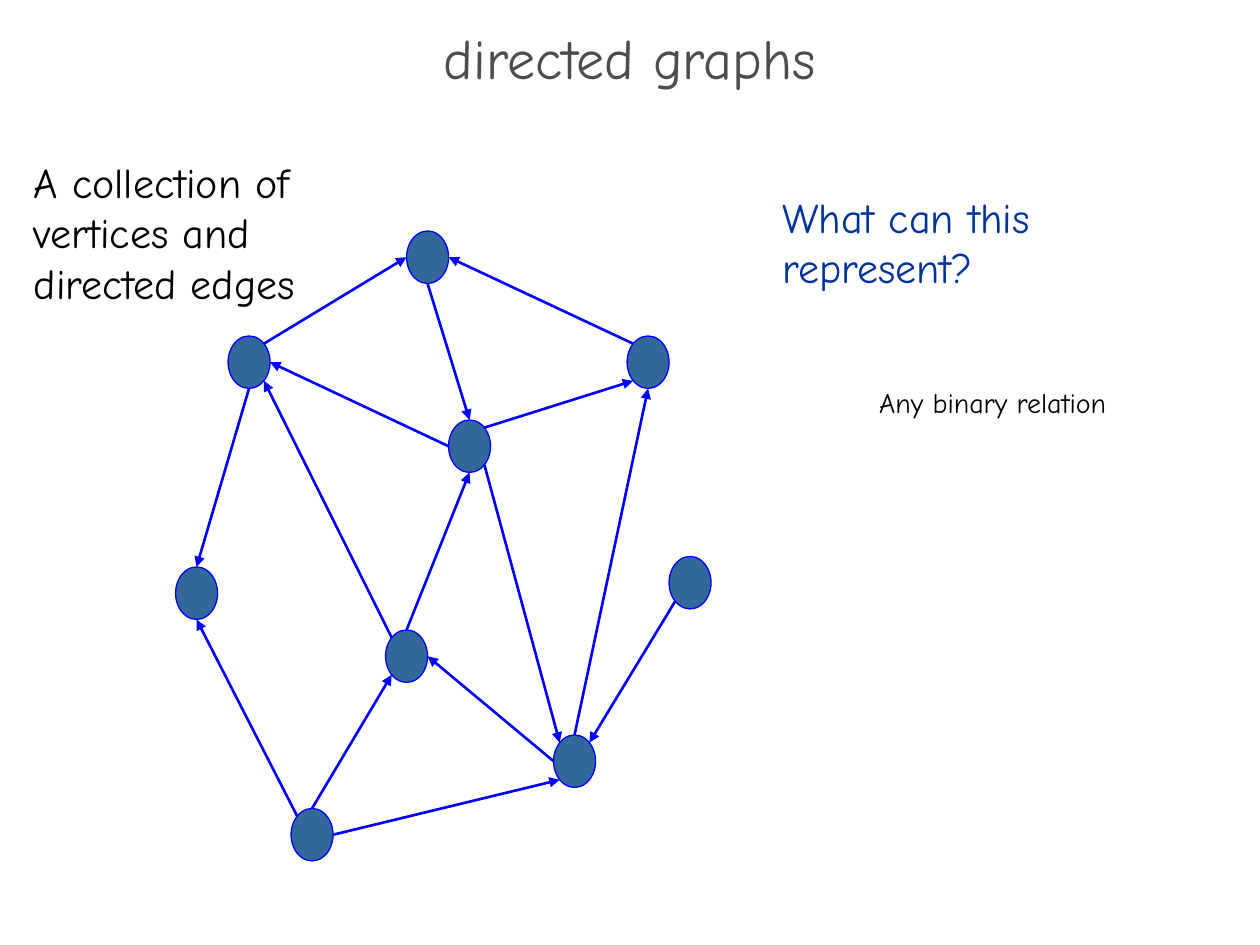
from math import cos, radians, sin

from lxml.etree import SubElement
from pptx import Presentation
from pptx.dml.color import RGBColor
from pptx.enum.shapes import MSO_CONNECTOR, MSO_SHAPE
from pptx.enum.text import MSO_ANCHOR, MSO_AUTO_SIZE, PP_ALIGN
from pptx.oxml.ns import qn
from pptx.util import Inches, Pt

GRAY = RGBColor(0x4D, 0x4D, 0x4D)
BLACK = RGBColor(0x00, 0x00, 0x00)
NAVY = RGBColor(0x00, 0x33, 0x99)
STEEL = RGBColor(0x33, 0x66, 0x99)
BLUE = RGBColor(0x00, 0x00, 0xFF)

COMPASS = {name: radians(45 * step) for step, name in
           enumerate(("E", "SE", "S", "SW", "W", "NW", "N", "NE"))}

VERTICES = {
    "top": (41, 24.5),
    "left": (24, 34.5),
    "lone": (66, 55.5),
    "center": (45, 42.5),
    "inner": (39, 62.5),
    "far left": (19, 56.5),
    "right": (62, 34.5),
    "bottom": (30, 79.5),
    "sink": (55, 72.5),
}

EDGES = (
    ("left", "NE", "top", "W"),
    ("left", "S", "far left", "N"),
    ("bottom", "NW", "far left", "S"),
    ("bottom", "E", "sink", "SW"),
    ("right", "NW", "top", "E"),
    ("top", "S", "center", "N"),
    ("center", "W", "left", "E"),
    ("inner", "NW", "left", "SE"),
    ("inner", "N", "center", "S"),
    ("bottom", "N", "inner", "SW"),
    ("center", "NE", "right", "SW"),
    ("lone", "SW", "sink", "NE"),
    ("sink", "W", "inner", "E"),
    ("sink", "N", "right", "S"),
    ("center", "SE", "sink", "NW"),
)


class GraphSlide:
    font_name = "Comic Neue"
    cells_per_inch = 12
    graph_offset = -0.28
    radius_columns, radius_rows = 2, 2.5

    def __init__(self, presentation):
        self.width = presentation.slide_width
        self.height = presentation.slide_height
        self.slide = presentation.slides.add_slide(presentation.slide_layouts[6])

    def cells(self, count):
        return Inches(count / self.cells_per_inch)

    def position(self, column, row):
        return self.cells(column + self.graph_offset), self.cells(row)

    def vertex(self, column, row):
        left, top = self.position(column - self.radius_columns, row - self.radius_rows)
        shape = self.slide.shapes.add_shape(
            MSO_SHAPE.OVAL, left, top,
            self.cells(2 * self.radius_columns), self.cells(2 * self.radius_rows))
        shape.shadow.inherit = False
        shape.fill.solid()
        shape.fill.fore_color.rgb = STEEL
        shape.line.color.rgb = BLUE
        shape.line.width = Pt(0.75)

    def rim(self, vertex, direction):
        column, row = VERTICES[vertex]
        angle = COMPASS[direction]
        return self.position(column + self.radius_columns * cos(angle),
                             row + self.radius_rows * sin(angle))

    def edge(self, source, leaving, target, entering):
        connector = self.slide.shapes.add_connector(
            MSO_CONNECTOR.STRAIGHT, *self.rim(source, leaving), *self.rim(target, entering))
        connector.line.color.rgb = BLUE
        connector.line.width = Pt(1.5)
        properties = connector.element.spPr
        SubElement(properties.find(qn("a:ln")), qn("a:tailEnd"), type="triangle")
        SubElement(properties, qn("a:effectLst"))

    def text(self, shares, paragraphs, size, color, wrap=True, grow=False,
             anchor=MSO_ANCHOR.TOP, alignment=PP_ALIGN.LEFT, line_spacing=1.0, space_after=0):
        left, top, width, height = shares
        shape = self.slide.shapes.add_textbox(
            int(left * self.width), int(top * self.height),
            int(width * self.width), int(height * self.height))
        frame = shape.text_frame
        frame.word_wrap = wrap
        frame.auto_size = MSO_AUTO_SIZE.SHAPE_TO_FIT_TEXT if grow else MSO_AUTO_SIZE.NONE
        frame.vertical_anchor = anchor
        for index, wording in enumerate(paragraphs):
            paragraph = frame.add_paragraph() if index else frame.paragraphs[0]
            paragraph.alignment = alignment
            paragraph.line_spacing = line_spacing
            paragraph.space_after = Pt(space_after)
            run = paragraph.add_run()
            run.text = wording
            run.font.name = self.font_name
            run.font.size = Pt(size)
            run.font.color.rgb = color


def main():
    presentation = Presentation()
    presentation.slide_width = Inches(10)
    presentation.slide_height = Inches(7.5)
    graph = GraphSlide(presentation)
    graph.text((0, 0.036, 1, 0.067), ["directed graphs"], 32, GRAY,
               anchor=MSO_ANCHOR.MIDDLE, alignment=PP_ALIGN.CENTER, line_spacing=0.7)
    for column, row in VERTICES.values():
        graph.vertex(column, row)
    for edge in EDGES:
        graph.edge(*edge)
    graph.text((0.017, 0.159, 0.28, 0.175),
               ["A collection of", "vertices and directed edges"], 24, BLACK, grow=True)
    graph.text((0.611, 0.196, 0.339, 0.687), ["What can this represent?"], 24, NAVY,
               space_after=6)
    graph.text((0.688, 0.401, 0.22, 0.049), ["Any binary relation"], 16, BLACK,
               wrap=False, grow=True)
    presentation.save("out.pptx")


if __name__ == "__main__":
    main()
